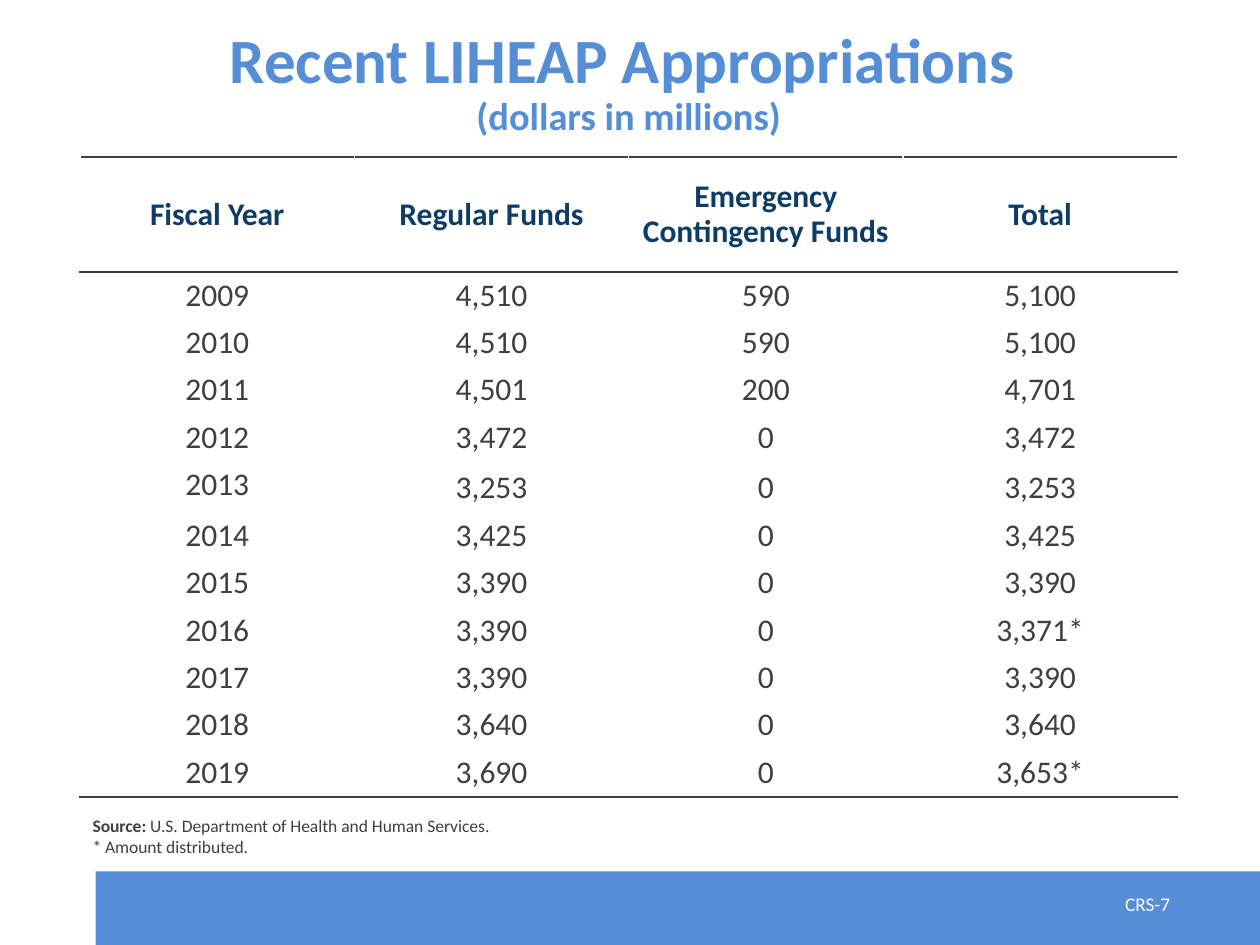
import pptx
import pptx.util
import pptx.dml.color
import pptx.enum.shapes
import pptx.enum.text
import pptx.oxml
import pptx.oxml.ns

Pt = pptx.util.Pt
Align = pptx.enum.text.PP_ALIGN
Anchor = pptx.enum.text.MSO_ANCHOR

COLORS = {"blue": "558ED5", "navy": "0F3C64", "gray": "3F3F3F", "white": "FFFFFF"}

HEADERS = ["Fiscal Year", "Regular Funds", "Emergency Contingency Funds", "Total"]
APPROPRIATIONS = [
    ["2009", "4,510", "590", "5,100"],
    ["2010", "4,510", "590", "5,100"],
    ["2011", "4,501", "200", "4,701"],
    ["2012", "3,472", "0", "3,472"],
    ["2013", "3,253", "0", "3,253"],
    ["2014", "3,425", "0", "3,425"],
    ["2015", "3,390", "0", "3,390"],
    ["2016", "3,390", "0", "3,371*"],
    ["2017", "3,390", "0", "3,390"],
    ["2018", "3,640", "0", "3,640"],
    ["2019", "3,690", "0", "3,653*"],
]


class SlideBuilder:
    """Holds the style and the current slide."""

    font_name = "Calibri"

    def __init__(self, slide):
        self.slide = slide

    def color(self, name):
        return pptx.dml.color.RGBColor.from_string(COLORS[name])

    def format_font(self, font, color, **values):
        for name, value in {"name": self.font_name, **values}.items():
            setattr(font, name, value)
        font.color.rgb = self.color(color)

    def add_run(self, paragraph, text, size, color, bold=False):
        run = paragraph.add_run()
        run.text = text
        self.format_font(run.font, color, size=Pt(size), bold=bold)

    def place(self, shape, *box):
        for name, value in zip(("left", "top", "width", "height"), box):
            setattr(shape, name, Pt(value))

    def title(self, heading, subheading, box):
        shape = self.slide.shapes.title
        self.place(shape, *box)
        frame = shape.text_frame
        frame.auto_size = pptx.enum.text.MSO_AUTO_SIZE.NONE
        frame.vertical_anchor = Anchor.MIDDLE
        paragraph = frame.paragraphs[0]
        paragraph.alignment = Align.CENTER
        paragraph.line_spacing = 0.9
        self.add_run(paragraph, heading, 36, "blue", True)
        self.add_run(paragraph, " ", 32, "blue", True)
        paragraph.add_line_break()
        self.add_run(paragraph, subheading, 22, "blue", True)

    def band(self, color, box):
        shape = self.slide.shapes.add_shape(
            pptx.enum.shapes.MSO_SHAPE.RECTANGLE, *map(Pt, box))
        shape.shadow.inherit = False
        shape.fill.solid()
        shape.fill.fore_color.rgb = self.color(color)
        shape.line.fill.background()

    def text(self, lines, size, color, box, wrap=False):
        """Each line is a list of (text, bold) pairs."""
        frame = self.slide.shapes.add_textbox(*map(Pt, box)).text_frame
        frame.word_wrap = wrap
        paragraph = frame.paragraphs[0]
        for index, line in enumerate(lines):
            if index:
                paragraph.add_line_break()
            for text, bold in line:
                self.add_run(paragraph, text, size, color, bold)

    def rule_cell(self, cell, sides):
        """Draw 1 pt rules on the given sides ("T", "B") of a cell."""
        properties = cell._tc.get_or_add_tcPr()
        for index, side in enumerate(sides):
            properties.insert(index, pptx.oxml.parse_xml(
                f'<a:ln{side} {pptx.oxml.ns.nsdecls("a")} w="12700"><a:solidFill>'
                f'<a:srgbClr val="{COLORS["gray"]}"/></a:solidFill></a:ln{side}>'))

    def table(self, headers, records, box, row_heights):
        rows = [headers] + records
        table = self.slide.shapes.add_table(
            len(rows), len(headers), *map(Pt, box)).table
        table.first_row = table.horz_banding = False
        for column in table.columns:
            column.width = Pt(box[2] / len(headers))
        rules = {0: "TB", 1: "T", len(records): "B"}
        for row_index, values in enumerate(rows):
            table.rows[row_index].height = Pt(row_heights[row_index])
            header = row_index == 0
            for column_index, value in enumerate(values):
                cell = table.cell(row_index, column_index)
                cell.fill.background()
                cell.vertical_anchor = Anchor.MIDDLE if header else Anchor.TOP
                paragraph = cell.text_frame.paragraphs[0]
                paragraph.alignment = Align.CENTER
                # The 2013 amounts are set with full line spacing
                loose = values[0] == "2013" and column_index > 0
                paragraph.line_spacing = 1.0 if loose else 0.9
                self.add_run(paragraph, value, 18, "navy" if header else "gray", header)
                self.rule_cell(cell, rules.get(row_index, ""))


def main():
    presentation = pptx.Presentation()
    presentation.slide_width, presentation.slide_height = Pt(720), Pt(540)
    slide = presentation.slides.add_slide(presentation.slide_layouts[5])
    builder = SlideBuilder(slide)

    # Footer band and page label
    builder.band("blue", (54.7, 498, 666, 43.2))
    builder.text([[("CRS-7", False)]], 11, "white", (635.8, 506.2, 54, 20.9), wrap=True)

    # Title
    builder.title("Recent LIHEAP Appropriations", "(dollars in millions)",
                  (46.8, -4.3, 625, 105))

    # Appropriations by fiscal year
    heights = [65.7] + [28.6 if record[0] == "2013" else 27.1
                        for record in APPROPRIATIONS]
    builder.table(HEADERS, APPROPRIATIONS, (45.8, 89.8, 627, 365.3), heights)

    # Source note
    builder.text([[("Source:", True), (" U.S. Department of Health and Human Services. ", False)],
                  [("* Amount distributed.", False)]],
                 10, "gray", (45.8, 462.2, 255, 31.7))

    presentation.save("out.pptx")


if __name__ == "__main__":
    main()
